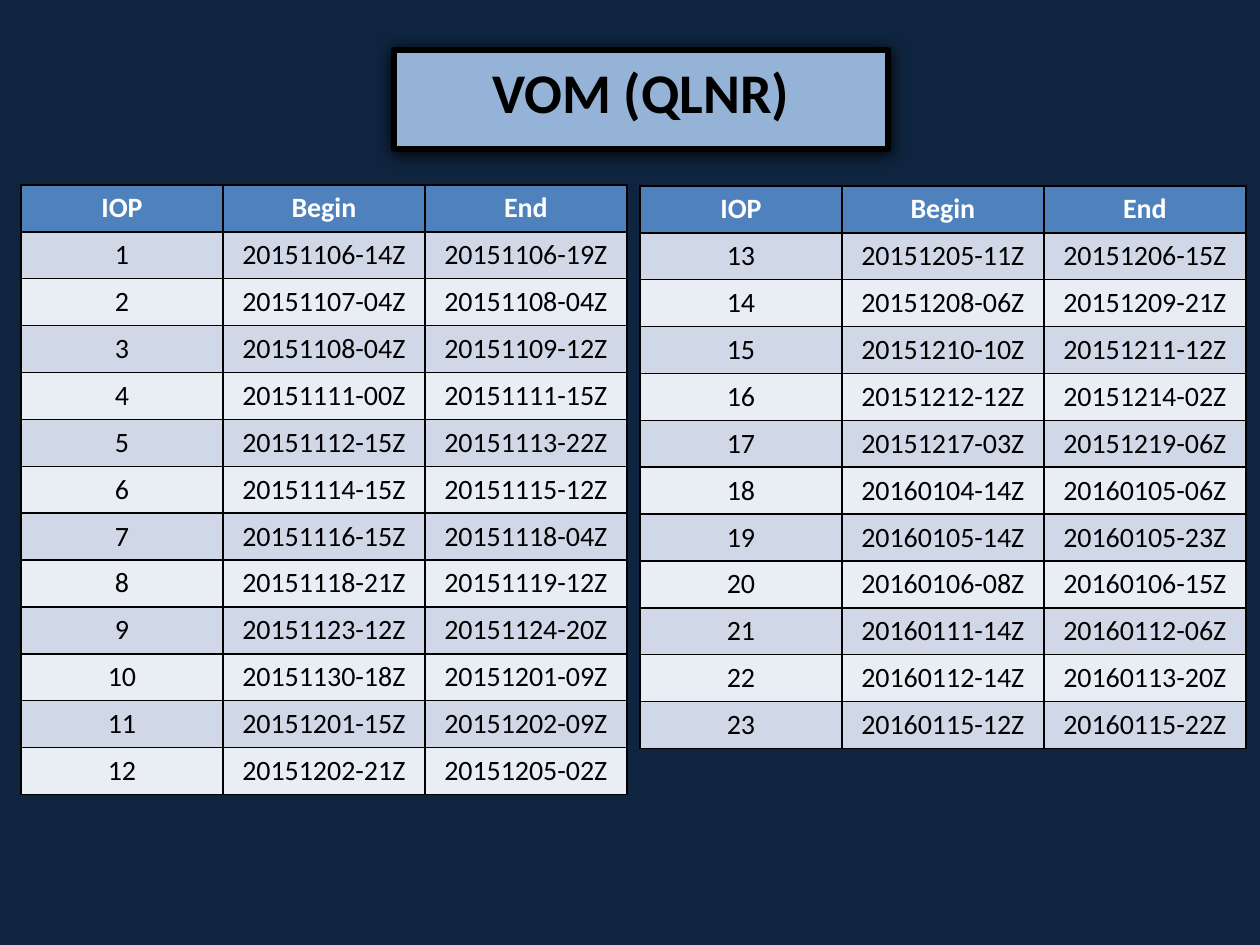
from dataclasses import dataclass

from lxml.etree import SubElement
from pptx import Presentation
from pptx.dml.color import RGBColor as Color
from pptx.enum.text import MSO_ANCHOR as Anchor, PP_ALIGN as Align
from pptx.oxml.ns import qn
from pptx.util import Emu, Pt

EMU_PER_PX = 914400 // 126


@dataclass(frozen=True)
class Theme:
    font: str = "Calibri"
    backdrop: str = "0F243E"
    title_fill: str = "95B3D7"
    header_fill: str = "4F81BD"
    band_fills: tuple = ("D0D8E8", "E9EDF4")
    ink: str = "000000"
    header_ink: str = "FFFFFF"
    title_size: int = 32
    cell_size: int = 16
    title_line: int = 3
    cell_line: int = 1


THEME = Theme()
HEADINGS = ("IOP", "Begin", "End")
COLUMN_WIDTH, ROW_HEIGHT = 202, 46

PERIODS = [
    ("20151106-14Z", "20151106-19Z"),
    ("20151107-04Z", "20151108-04Z"),
    ("20151108-04Z", "20151109-12Z"),
    ("20151111-00Z", "20151111-15Z"),
    ("20151112-15Z", "20151113-22Z"),
    ("20151114-15Z", "20151115-12Z"),
    ("20151116-15Z", "20151118-04Z"),
    ("20151118-21Z", "20151119-12Z"),
    ("20151123-12Z", "20151124-20Z"),
    ("20151130-18Z", "20151201-09Z"),
    ("20151201-15Z", "20151202-09Z"),
    ("20151202-21Z", "20151205-02Z"),
    ("20151205-11Z", "20151206-15Z"),
    ("20151208-06Z", "20151209-21Z"),
    ("20151210-10Z", "20151211-12Z"),
    ("20151212-12Z", "20151214-02Z"),
    ("20151217-03Z", "20151219-06Z"),
    ("20160104-14Z", "20160105-06Z"),
    ("20160105-14Z", "20160105-23Z"),
    ("20160106-08Z", "20160106-15Z"),
    ("20160111-14Z", "20160112-06Z"),
    ("20160112-14Z", "20160113-20Z"),
    ("20160115-12Z", "20160115-22Z"),
]
LEFT_COUNT = 12


def px(length):
    return Emu(length * EMU_PER_PX)


def paint(fill, color):
    fill.solid()
    fill.fore_color.rgb = Color.from_string(color)


def write(frame, text, size, color, bold):
    frame.text = text
    para = frame.paragraphs[0]
    para.alignment = Align.CENTER
    font = para.runs[0].font
    font.name, font.size, font.bold = THEME.font, Pt(size), bold
    font.color.rgb = Color.from_string(color)


def add_shadow(shape):
    """Give the shape a soft shadow just below it."""
    effects = SubElement(shape._element.spPr, qn("a:effectLst"))
    shadow = SubElement(effects, qn("a:outerShdw"), blurRad=str(Pt(8.5)),
                        dist=str(Pt(1)), dir="5400000", rotWithShape="0")
    SubElement(shadow, qn("a:srgbClr"), val=THEME.ink)


def add_borders(cell):
    properties = cell._tc.get_or_add_tcPr()
    for side in ("lnL", "lnR", "lnT", "lnB"):
        line = SubElement(properties, qn(f"a:{side}"), w=str(Pt(THEME.cell_line)))
        fill = SubElement(line, qn("a:solidFill"))
        SubElement(fill, qn("a:srgbClr"), val=THEME.ink)


def place_title(page, text, left, top, width, height):
    box = page.shapes.title
    box.left, box.top, box.width, box.height = map(px, (left, top, width, height))
    paint(box.fill, THEME.title_fill)
    paint(box.line.fill, THEME.ink)
    box.line.width = Pt(THEME.title_line)
    add_shadow(box)
    frame = box.text_frame
    frame.vertical_anchor = Anchor.TOP
    frame.margin_top = px(7)
    write(frame, text, THEME.title_size, THEME.ink, True)


def add_period_table(page, left, top, records):
    rows = [HEADINGS, *records]
    table = page.shapes.add_table(
        len(rows), len(HEADINGS), px(left), px(top),
        px(COLUMN_WIDTH * len(HEADINGS)), px(ROW_HEIGHT * len(rows))).table
    for index, values in enumerate(rows):
        header = index == 0
        fill = THEME.header_fill if header else THEME.band_fills[(index - 1) % 2]
        ink = THEME.header_ink if header else THEME.ink
        for column, value in enumerate(values):
            cell = table.cell(index, column)
            add_borders(cell)
            paint(cell.fill, fill)
            write(cell.text_frame, value, THEME.cell_size, ink, header)


def main():
    deck = Presentation()
    deck.slide_width, deck.slide_height = px(1260), px(945)
    page = deck.slides.add_slide(deck.slide_layouts[5])
    paint(page.background.fill, THEME.backdrop)

    records = [(str(number), *period) for number, period in enumerate(PERIODS, 1)]
    add_period_table(page, 21, 185, records[:LEFT_COUNT])
    add_period_table(page, 640, 186, records[LEFT_COUNT:])
    place_title(page, "VOM (QLNR)", 394, 50, 494, 99)
    deck.save("out.pptx")


if __name__ == "__main__":
    main()
